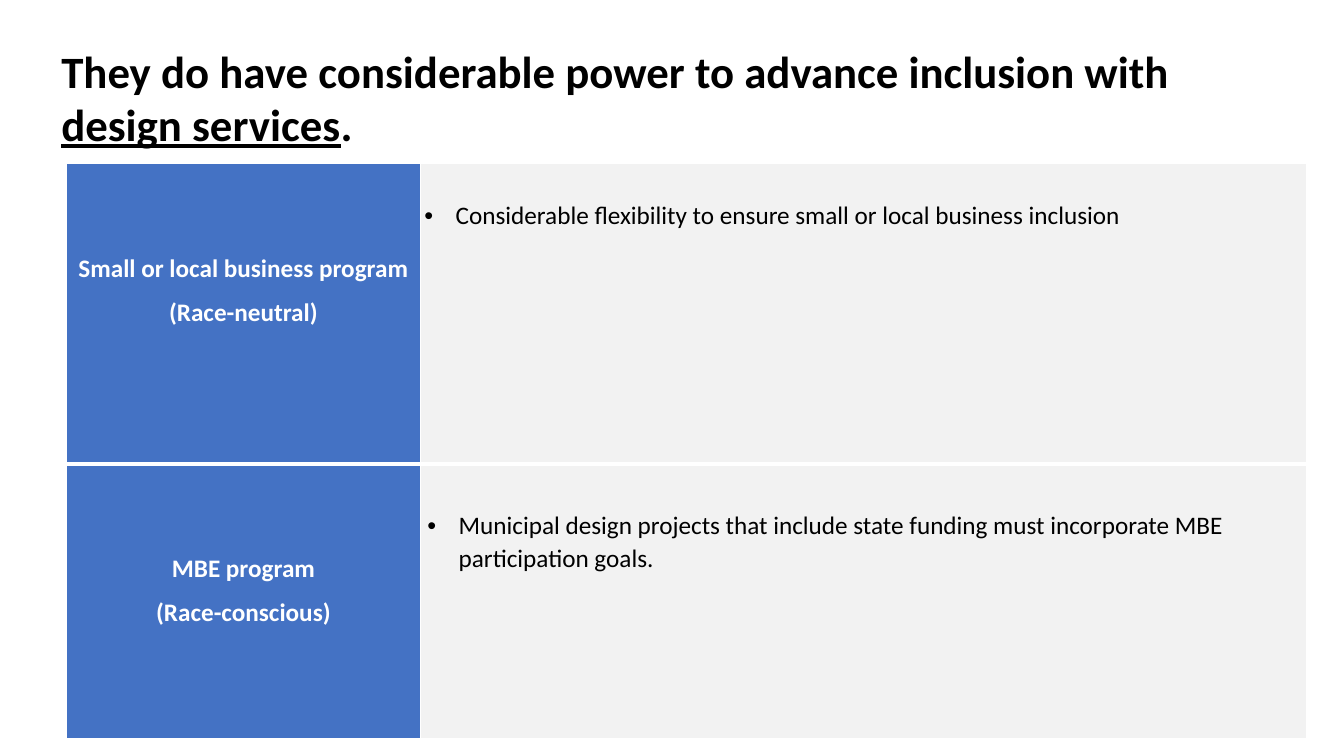
from dataclasses import dataclass

from lxml import etree
from pptx import Presentation
from pptx.dml.color import RGBColor
from pptx.enum.text import MSO_ANCHOR, MSO_AUTO_SIZE, PP_ALIGN
from pptx.oxml.ns import qn
from pptx.util import Inches, Pt

BLACK = RGBColor(0x00, 0x00, 0x00)
WHITE = RGBColor(0xFF, 0xFF, 0xFF)
BLUE = RGBColor(0x44, 0x72, 0xC4)
GRAY = RGBColor(0xF2, 0xF2, 0xF2)
CENTER, LEFT = PP_ALIGN.CENTER, PP_ALIGN.LEFT
TOP = MSO_ANCHOR.TOP
GROW = MSO_AUTO_SIZE.SHAPE_TO_FIT_TEXT
FONT = "Calibri"
INDENT = Inches(0.31)
COLS = (3.51, 8.79)


@dataclass
class Entry:
    lines: list[str]
    fill: RGBColor
    color: RGBColor
    head: bool
    side: float
    top: float


@dataclass
class Row:
    height: float
    label: Entry
    detail: Entry


def label(*lines: str) -> Entry:
    return Entry(list(lines), BLUE, WHITE, True, 0.04, 0.87)


def detail(line: str, side: float, top: float) -> Entry:
    return Entry([line], GRAY, BLACK, False, side, top)


ROWS = [
    Row(2.98, label("Small or local business program", "(Race-neutral)"),
        detail("Considerable flexibility to ensure small or local "
               "business inclusion", 0.04, 0.35)),
    Row(2.73, label("MBE program", "(Race-conscious)"),
        detail("Municipal design projects that include state funding must "
               "incorporate MBE participation goals.", 0.07, 0.44)),
]
TITLE = [
    ("They do have considerable power to advance inclusion with ", False),
    ("design services", True),
    (".", False),
]


def add_run(para, text: str, size: int, color: RGBColor, bold: bool,
            under: bool = False) -> None:
    run = para.add_run()
    run.text = text
    font = run.font
    font.name, font.size, font.bold = FONT, Pt(size), bold
    font.underline = under
    font.color.rgb = color


def add_bullet(para) -> None:
    props = para._p.get_or_add_pPr()
    props.set("marL", str(INDENT))
    props.set("indent", str(-INDENT))
    etree.SubElement(props, qn("a:buFont")).set("typeface", "Arial")
    etree.SubElement(props, qn("a:buChar")).set("char", "•")


def add_edges(cell, widths: dict[str, int]) -> None:
    props = cell._tc.get_or_add_tcPr()
    for spot, (side, width) in enumerate(widths.items()):
        line = etree.Element(qn(f"a:ln{side}"), w=str(Pt(width)))
        fill = etree.SubElement(line, qn("a:solidFill"))
        etree.SubElement(fill, qn("a:srgbClr")).set("val", str(WHITE))
        props.insert(spot, line)


def fill_cell(cell, entry: Entry) -> None:
    cell.fill.solid()
    cell.fill.fore_color.rgb = entry.fill
    cell.vertical_anchor = TOP
    cell.margin_left = cell.margin_right = Inches(entry.side)
    cell.margin_top, cell.margin_bottom = Inches(entry.top), 0
    frame = cell.text_frame
    for i, text in enumerate(entry.lines):
        para = frame.add_paragraph() if i else frame.paragraphs[0]
        para.alignment = CENTER if entry.head else LEFT
        para.line_spacing = 1.07
        para.space_after = Pt(8)
        if not entry.head:
            add_bullet(para)
        add_run(para, text, 18, entry.color, entry.head)


def add_grid(slide) -> None:
    high = sum(row.height for row in ROWS)
    table = slide.shapes.add_table(
        len(ROWS), len(COLS), Inches(0.66), Inches(1.62),
        Inches(sum(COLS)), Inches(high)).table
    table.first_row = table.horz_banding = False
    for col, width in zip(table.columns, COLS):
        col.width = Inches(width)
    for i, row in enumerate(ROWS):
        table.rows[i].height = Inches(row.height)
        # The rule between the two programs is thicker
        edges = {"L": 1, "R": 1, "T": 3 if i else 1,
                 "B": 3 if i < len(ROWS) - 1 else 1}
        for j, entry in enumerate((row.label, row.detail)):
            cell = table.cell(i, j)
            fill_cell(cell, entry)
            add_edges(cell, edges)


def add_title(slide) -> None:
    box = slide.shapes.add_textbox(
        Inches(0.51), Inches(0.38), Inches(12.3), Inches(1.18))
    frame = box.text_frame
    frame.word_wrap = True
    frame.auto_size = GROW
    for text, under in TITLE:
        add_run(frame.paragraphs[0], text, 32, BLACK, True, under)


def main() -> None:
    deck = Presentation()
    deck.slide_width, deck.slide_height = Inches(13.33), Inches(7.5)
    slide = deck.slides.add_slide(deck.slide_layouts[6])
    # Program table, then the headline
    add_grid(slide)
    add_title(slide)
    deck.save("out.pptx")


if __name__ == "__main__":
    main()
